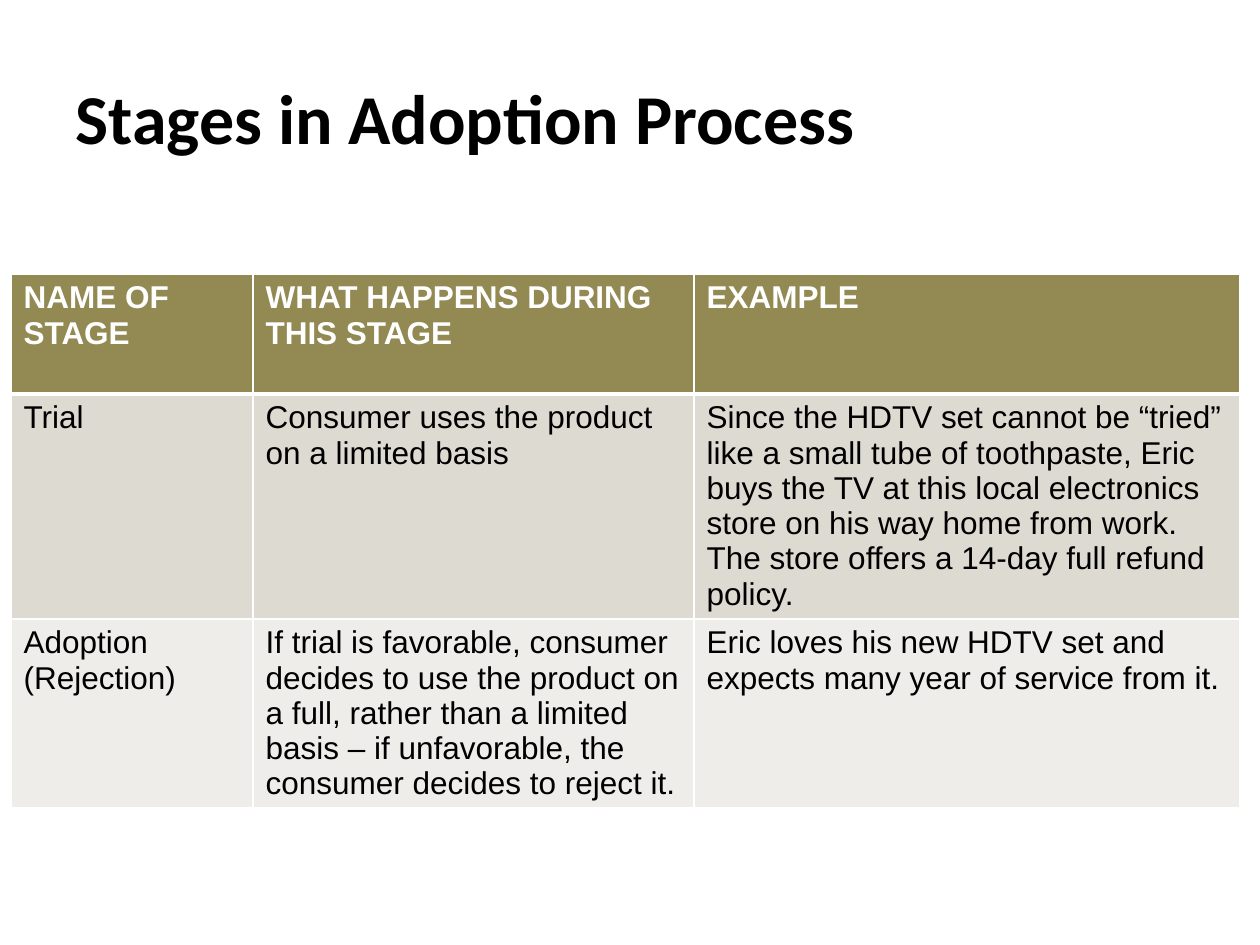
import pptx
import pptx.dml.color
import pptx.enum.text
import pptx.oxml
import pptx.oxml.ns
import pptx.util

EMU_PER_PX = 914400 / 126

STAGES = [
    ["NAME OF STAGE", "WHAT HAPPENS DURING THIS STAGE", "EXAMPLE"],
    [
        "Trial",
        "Consumer uses the product on a limited basis",
        "Since the HDTV set cannot be “tried” like a small tube of toothpaste, "
        "Eric buys the TV at this local electronics store on his way home from work. "
        "The store offers a 14-day full refund policy.",
    ],
    [
        "Adoption (Rejection)",
        "If trial is favorable, consumer decides to use the product on a full, "
        "rather than a limited basis – if unfavorable, the consumer decides to reject it.",
        "Eric loves his new HDTV set and expects many year of service from it.",
    ],
]


def px(length):
    return pptx.util.Emu(round(length * EMU_PER_PX))


def color(value):
    return pptx.dml.color.RGBColor.from_string(value)


class SlideBuilder:
    title_format = {"name": "Calibri", "size": pptx.util.Pt(40), "bold": True}
    header_format = {"name": "Arial", "size": pptx.util.Pt(18), "bold": True}
    body_format = {"name": "Arial", "size": pptx.util.Pt(18), "bold": False}
    row_fills = ["938953", "DCDAD1", "EEEDE9"]
    text_color = "000000"
    header_color = "FFFFFF"
    border_color = "FFFFFF"

    def __init__(self, page):
        self.page = page

    def text(self, frame, words, formats, text_color):
        para = frame.paragraphs[0]
        para.alignment = pptx.enum.text.PP_ALIGN.LEFT
        span = para.add_run()
        span.text = words
        for key, value in formats.items():
            setattr(span.font, key, value)
        span.font.color.rgb = color(text_color)

    def title(self, words, left, top, width, height):
        box = self.page.shapes.title
        place = {"left": left, "top": top, "width": width, "height": height}
        for key, value in place.items():
            setattr(box, key, px(value))
        box.text_frame.vertical_anchor = pptx.enum.text.MSO_ANCHOR.MIDDLE
        self.text(box.text_frame, words, self.title_format, self.text_color)

    def border(self, cell, side, points):
        namespace = pptx.oxml.ns.nsdecls("a")
        line = pptx.oxml.parse_xml(
            f'<a:ln{side} {namespace} w="{pptx.util.Pt(points)}"><a:solidFill>'
            f'<a:srgbClr val="{self.border_color}"/></a:solidFill></a:ln{side}>'
        )
        cell._tc.get_or_add_tcPr().append(line)

    def table(self, rows, left, top, widths, heights):
        frame = self.page.shapes.add_table(
            len(rows), len(widths), px(left), px(top), px(sum(widths)), px(sum(heights))
        )
        table = frame.table
        for column, width in zip(table.columns, widths):
            column.width = px(width)
        for row, height in zip(table.rows, heights):
            row.height = px(height)
        for index, entries in enumerate(rows):
            is_header = index == 0
            formats = self.header_format if is_header else self.body_format
            text_color = self.header_color if is_header else self.text_color
            borders = {"L": 1, "R": 1, "T": 3 if index == 1 else 1, "B": 3 if is_header else 1}
            for position, words in enumerate(entries):
                cell = table.cell(index, position)
                for side, points in borders.items():
                    self.border(cell, side, points)
                cell.fill.solid()
                cell.fill.fore_color.rgb = color(self.row_fills[index])
                self.text(cell.text_frame, words, formats, text_color)


def main():
    deck = pptx.Presentation()
    deck.slide_width = px(1260)
    deck.slide_height = px(945)
    builder = SlideBuilder(deck.slides.add_slide(deck.slide_layouts[5]))
    builder.table(STAGES, 11, 274, [242, 441, 546], [120, 225, 188])
    builder.title("Stages in Adoption Process", 63, 38, 1134, 158)
    deck.save("out.pptx")


if __name__ == "__main__":
    main()
